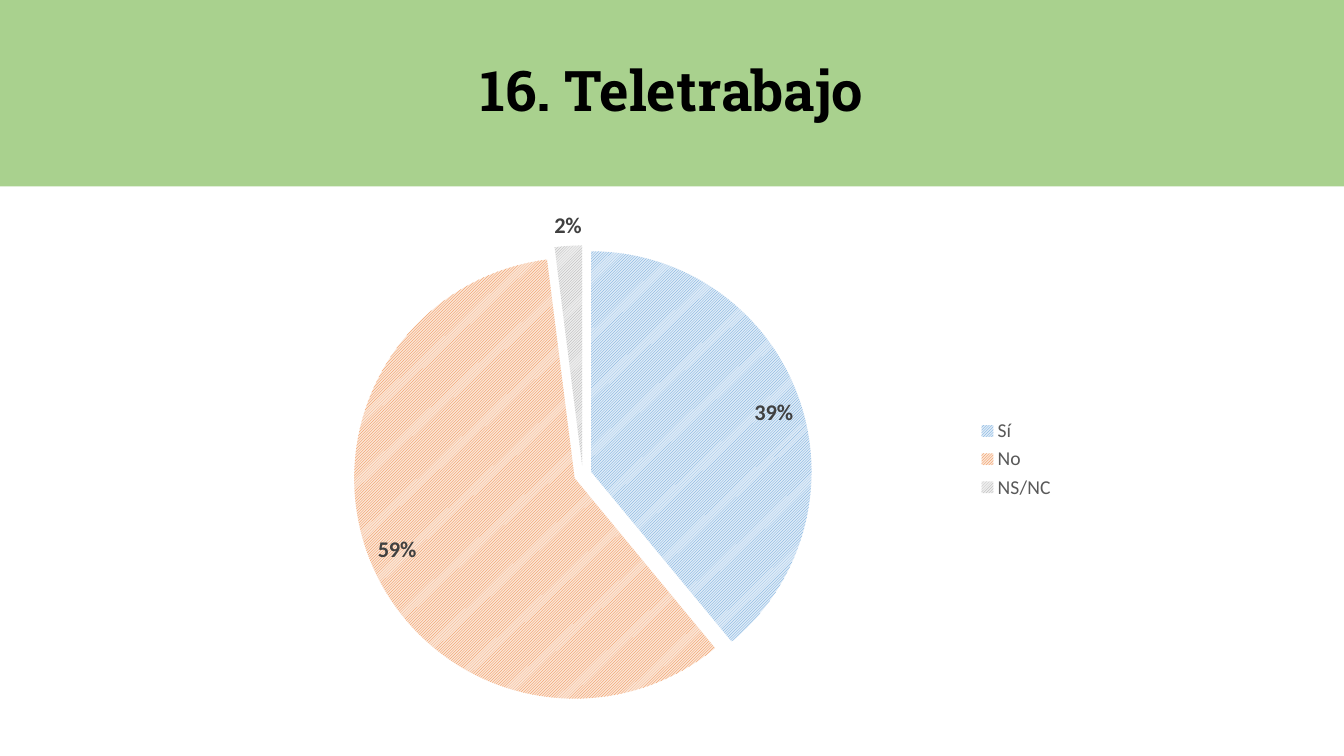
from pptx import Presentation
from pptx.chart.data import CategoryChartData
from pptx.dml.color import RGBColor
from pptx.enum.chart import XL_CHART_TYPE, XL_LABEL_POSITION, XL_LEGEND_POSITION
from pptx.enum.dml import MSO_PATTERN
from pptx.enum.shapes import MSO_SHAPE
from pptx.enum.text import MSO_ANCHOR, PP_ALIGN
from pptx.oxml import parse_xml
from pptx.oxml.ns import nsdecls, qn
from pptx.util import Inches, Pt

TITLE = "16. Teletrabajo"
# Answer, percentage, stripe colour, background colour
ANSWERS = [
    ("Sí", 39, "5B9BD5", "DEEBF7"),
    ("No", 59, "ED7D31", "FBE5D6"),
    ("NS/NC", 2, "A5A5A5", "EDEDED"),
]
THEME = {
    "banner": "A9D18E",
    "title": ("Roboto Slab", 40, "000000", True),
    "chart": ("Calibri", 10, "000000", False),
    "legend": ("Calibri", 14, "595959", False),
    "label": ("Calibri", 16, "404040", True),
}
SLIDE_WIDTH, SLIDE_HEIGHT = Inches(13.33), Inches(7.5)
BANNER_HEIGHT = Inches(1.85)
CHART_BOX = [Inches(length) for length in (1.94, 1.97, 8.63, 5.17)]
PIE_AREA = {"x": 0.18, "y": 0.09, "w": 0.53, "h": 0.88}  # fractions of the chart
EXPLOSION = 4


def style_font(font, role):
    font.name, size, color, font.bold = THEME[role]
    font.size = Pt(size)
    font.color.rgb = RGBColor.from_string(color)


def add_banner(slide):
    banner = slide.shapes.add_shape(MSO_SHAPE.RECTANGLE, 0, 0, SLIDE_WIDTH, BANNER_HEIGHT)
    banner.shadow.inherit = False
    banner.fill.solid()
    banner.fill.fore_color.rgb = RGBColor.from_string(THEME["banner"])
    banner.line.fill.background()
    banner.text_frame.text = TITLE
    banner.text_frame.vertical_anchor = MSO_ANCHOR.MIDDLE
    paragraph = banner.text_frame.paragraphs[0]
    paragraph.alignment = PP_ALIGN.CENTER
    paragraph.line_spacing = 0.9
    style_font(paragraph.runs[0].font, "title")


def add_pie(slide):
    data = CategoryChartData()
    data.categories = [answer[0] for answer in ANSWERS]
    data.add_series("Series 1", [answer[1] for answer in ANSWERS])
    chart = slide.shapes.add_chart(XL_CHART_TYPE.PIE, *CHART_BOX, data).chart
    chart.has_title = False
    style_font(chart.font, "chart")
    chart.has_legend = True
    chart.legend.position = XL_LEGEND_POSITION.RIGHT
    chart.legend.include_in_layout = False
    style_font(chart.legend.font, "legend")

    # Striped slices
    plot = chart.plots[0]
    plot.vary_by_categories = True
    series = plot.series[0]
    for index, (_, _, stripe, background) in enumerate(ANSWERS):
        fill = series.points[index].format.fill
        fill.patterned()
        fill.pattern = MSO_PATTERN.LIGHT_UPWARD_DIAGONAL
        fill.fore_color.rgb = RGBColor.from_string(stripe)
        fill.back_color.rgb = RGBColor.from_string(background)

    # Percentages: inside the large slices, outside the thin one
    labels = series.data_labels
    labels.show_value = False
    labels.show_percentage = True
    labels.number_format = "0%"
    labels.number_format_is_linked = False
    labels.position = XL_LABEL_POSITION.INSIDE_END
    style_font(labels.font, "label")
    thin_label = series.points[len(ANSWERS) - 1].data_label
    style_font(thin_label.font, "label")
    thin_label.position = XL_LABEL_POSITION.OUTSIDE_END
    series_xml = series._element
    for label in series_xml.iter(qn("c:dLbl")):
        label.find(qn("c:showVal")).set("val", "0")
        label.find(qn("c:showPercent")).set("val", "1")

    # Gap between slices
    series_xml.find(qn("c:dPt")).addprevious(
        parse_xml(f'<c:explosion {nsdecls("c")} val="{EXPLOSION}"/>'))

    # Place of the pie inside the chart
    plot_area = chart._chartSpace.chart.plotArea
    for layout in plot_area.findall(qn("c:layout")):
        plot_area.remove(layout)
    modes = "".join(f'<c:{side}Mode val="edge"/>' for side in "xy")
    sizes = "".join(f'<c:{side} val="{value}"/>' for side, value in PIE_AREA.items())
    plot_area.insert(0, parse_xml(
        f'<c:layout {nsdecls("c")}><c:manualLayout><c:layoutTarget val="inner"/>'
        f"{modes}{sizes}</c:manualLayout></c:layout>"))


def main():
    presentation = Presentation()
    presentation.slide_width, presentation.slide_height = SLIDE_WIDTH, SLIDE_HEIGHT
    slide = presentation.slides.add_slide(presentation.slide_layouts[6])
    add_banner(slide)
    add_pie(slide)
    presentation.save("out.pptx")


if __name__ == "__main__":
    main()
